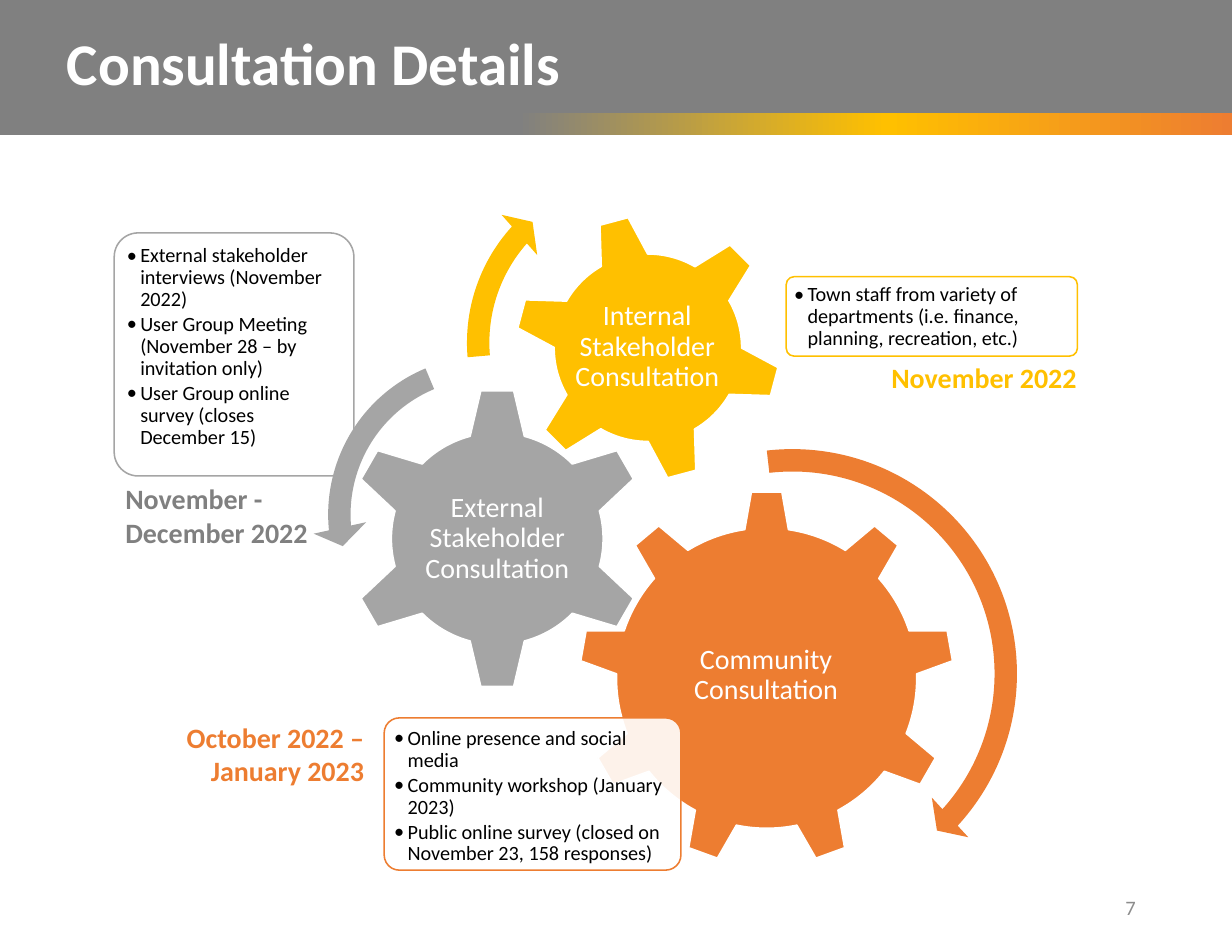
from dataclasses import dataclass
from typing import NamedTuple

import lxml.etree
import pptx
import pptx.dml.color
import pptx.enum.shapes
import pptx.enum.text
import pptx.oxml.ns
import pptx.util

Inches = pptx.util.Inches
Shape = pptx.enum.shapes.MSO_SHAPE
Align = pptx.enum.text.PP_ALIGN
Anchor = pptx.enum.text.MSO_ANCHOR
qn = pptx.oxml.ns.qn


@dataclass(frozen=True)
class Theme:
    font: str = "Calibri"
    title_size: float = 38
    label_size: float = 18
    note_size: float = 13
    number_size: float = 13.2
    white: str = "FFFFFF"
    black: str = "000000"
    header: str = "808080"
    number: str = "8C8C8C"
    orange: str = "ED7D31"
    grey: str = "A5A5A5"
    yellow: str = "FFC000"


THEME = Theme()
ARROW_BAND = 0.2
ARROW_HEAD = 0.24


class Box(NamedTuple):
    left: float
    top: float
    width: float
    height: float

    def lengths(self) -> list:
        return [Inches(value) for value in self]


class Stage(NamedTuple):
    name: str
    color: str
    gear: Shape
    gear_box: Box
    rotation: float
    label_box: Box
    note_box: Box
    notes: list[str]


class Arrow(NamedTuple):
    """A square-framed arc arrow; angles are in degrees."""
    kind: Shape
    color: str
    left: float
    top: float
    size: float
    head_angle: float
    end_angle: float
    start_angle: float


class Caption(NamedTuple):
    text: str
    box: Box
    color: str
    size: float = THEME.label_size
    bold: bool = True
    align: Align = Align.LEFT
    anchor: Anchor = Anchor.TOP


STAGES = [
    Stage("Community Consultation", THEME.orange, Shape.GEAR_9,
          Box(5.17, 4.38, 3.35, 3.35), 0, Box(5.84, 5.17, 2, 1.72),
          Box(3.43, 6.41, 2.65, 1.36),
          ["Online presence and social media",
           "Community workshop (January 2023)",
           "Public online survey (closed on November 23, 158 responses)"]),
    Stage("External Stakeholder Consultation", THEME.grey, Shape.GEAR_6,
          Box(3.09, 3.46, 2.7, 2.7), 0, Box(3.69, 4.14, 1.5, 1.34),
          Box(1.02, 2.08, 2.14, 2.17),
          ["External stakeholder interviews (November 2022)",
           "User Group Meeting (November 28 – by invitation only)",
           "User Group online survey (closes December 15)"]),
    Stage("Internal Stakeholder Consultation", THEME.yellow, Shape.GEAR_6,
          Box(4.59, 1.91, 2.39, 2.39), 345, Box(5.03, 2.43, 1.5, 1.34),
          Box(7.02, 2.47, 2.6, 0.71),
          ["Town staff from variety of departments "
           "(i.e. finance, planning, recreation, etc.)"]),
]
ARROWS = [
    Arrow(Shape.CIRCULAR_ARROW, THEME.orange, 4.93, 3.87, 4.29, 4.98, 42.36, 263.46),
    Arrow(Shape.LEFT_CIRCULAR_ARROW, THEME.grey, 2.79, 3.04, 3.11, 7.17, 174.82, 247.3),
    Arrow(Shape.CIRCULAR_ARROW, THEME.yellow, 4.03, 1.38, 3.36, 6.57, 221.9, 175.14),
]
CAPTIONS = [
    Caption("Consultation Details", Box(0.5, 0.19, 7.36, 0.74), THEME.white,
            THEME.title_size),
    Caption("7", Box(9.77, 7.88, 0.47, 0.45), THEME.number, THEME.number_size,
            False, Align.RIGHT, Anchor.MIDDLE),
    Caption("November 2022", Box(7.86, 3.17, 2.05, 0.4), THEME.yellow),
    Caption("November - December 2022", Box(1.02, 4.25, 2.05, 0.71), THEME.header),
    Caption("October 2022 – January 2023", Box(1.13, 6.38, 2.22, 0.71),
            THEME.orange, align=Align.RIGHT),
]


def rgb(color: str) -> pptx.dml.color.RGBColor:
    return pptx.dml.color.RGBColor.from_string(color)


def add_shape(slide, kind: Shape, box: Box, fill: str, line: str | None = None):
    shape = slide.shapes.add_shape(kind, *box.lengths())
    shape.shadow.inherit = False
    shape.fill.solid()
    shape.fill.fore_color.rgb = rgb(fill)
    if line:
        shape.line.color.rgb = rgb(line)
        shape.line.width = pptx.util.Pt(1)
    else:
        shape.line.fill.background()
    return shape


def set_font(paragraph, size: float, color: str, bold: bool = False) -> None:
    paragraph.font.name = THEME.font
    paragraph.font.size = pptx.util.Pt(size)
    paragraph.font.bold = bold
    paragraph.font.color.rgb = rgb(color)


def set_insets(frame, inset: float) -> None:
    frame.margin_left = frame.margin_right = Inches(inset)
    frame.margin_top = frame.margin_bottom = Inches(inset)


def add_caption(slide, caption: Caption):
    frame = slide.shapes.add_textbox(*caption.box.lengths()).text_frame
    frame.word_wrap = True
    frame.vertical_anchor = caption.anchor
    paragraph = frame.paragraphs[0]
    paragraph.text = caption.text
    paragraph.alignment = caption.align
    set_font(paragraph, caption.size, caption.color, caption.bold)
    return frame


def add_header(slide) -> None:
    add_shape(slide, Shape.RECTANGLE, Box(0, 0, 11, 1.09), THEME.header)
    strip = add_shape(slide, Shape.RECTANGLE, Box(0, 1.01, 11, 0.2), THEME.header)
    strip.fill.gradient()
    strip.fill.gradient_angle = 0
    stops = strip._element.spPr.find(".//" + qn("a:gsLst"))
    stops.clear()
    for percent, color in [(0, THEME.header), (42, THEME.header),
                           (72, THEME.yellow), (100, THEME.orange)]:
        stop = lxml.etree.SubElement(stops, qn("a:gs"), pos=str(percent * 1000))
        lxml.etree.SubElement(stop, qn("a:srgbClr"), val=color)


def add_bullet(paragraph) -> None:
    properties = paragraph._p.get_or_add_pPr()
    properties.set("marL", str(Inches(0.12)))
    properties.set("indent", str(Inches(-0.12)))
    defaults = properties.find(qn("a:defRPr"))
    defaults.addprevious(lxml.etree.Element(qn("a:buFont"), typeface=THEME.font))
    defaults.addprevious(lxml.etree.Element(qn("a:buChar"), char="•"))


def add_notes(slide, stage: Stage) -> None:
    """Draw the slightly see-through box with the stage's bullets."""
    shape = add_shape(slide, Shape.ROUNDED_RECTANGLE, stage.note_box,
                      THEME.white, stage.color)
    shape.adjustments[0] = 0.1
    color = shape._element.spPr.find(qn("a:solidFill")).find(qn("a:srgbClr"))
    lxml.etree.SubElement(color, qn("a:alpha"), val="90000")
    frame = shape.text_frame
    frame.word_wrap = True
    frame.vertical_anchor = Anchor.TOP
    set_insets(frame, 0.05)
    for index, note in enumerate(stage.notes):
        paragraph = frame.add_paragraph() if index else frame.paragraphs[0]
        paragraph.text = note
        paragraph.level = 1
        paragraph.alignment = Align.LEFT
        paragraph.line_spacing = 0.9
        paragraph.space_after = pptx.util.Pt(2)
        set_font(paragraph, THEME.note_size, THEME.black)
        add_bullet(paragraph)


def add_stage(slide, stage: Stage) -> None:
    gear = add_shape(slide, stage.gear, stage.gear_box, stage.color, THEME.white)
    gear.rotation = stage.rotation
    frame = add_caption(slide, Caption(stage.name, stage.label_box, THEME.white,
                                       bold=False, align=Align.CENTER,
                                       anchor=Anchor.MIDDLE))
    set_insets(frame, 0.03)
    frame.paragraphs[0].line_spacing = 0.9
    add_notes(slide, stage)


def add_arrow(slide, arrow: Arrow) -> None:
    box = Box(arrow.left, arrow.top, arrow.size, arrow.size)
    shape = add_shape(slide, arrow.kind, box, arrow.color)
    angles = [angle * 0.6 for angle in arrow[-3:]]  # 60000 units a degree, over 100000
    values = [ARROW_BAND / arrow.size, *angles, ARROW_HEAD / arrow.size]
    for index, value in enumerate(values):
        shape.adjustments[index] = value


def main() -> None:
    presentation = pptx.Presentation()
    presentation.slide_width, presentation.slide_height = Inches(11), Inches(8.5)
    slide = presentation.slides.add_slide(presentation.slide_layouts[6])
    add_header(slide)
    for stage in STAGES:
        add_stage(slide, stage)
    for arrow in ARROWS:
        add_arrow(slide, arrow)
    for caption in CAPTIONS:
        add_caption(slide, caption)
    presentation.save("out.pptx")


if __name__ == "__main__":
    main()
